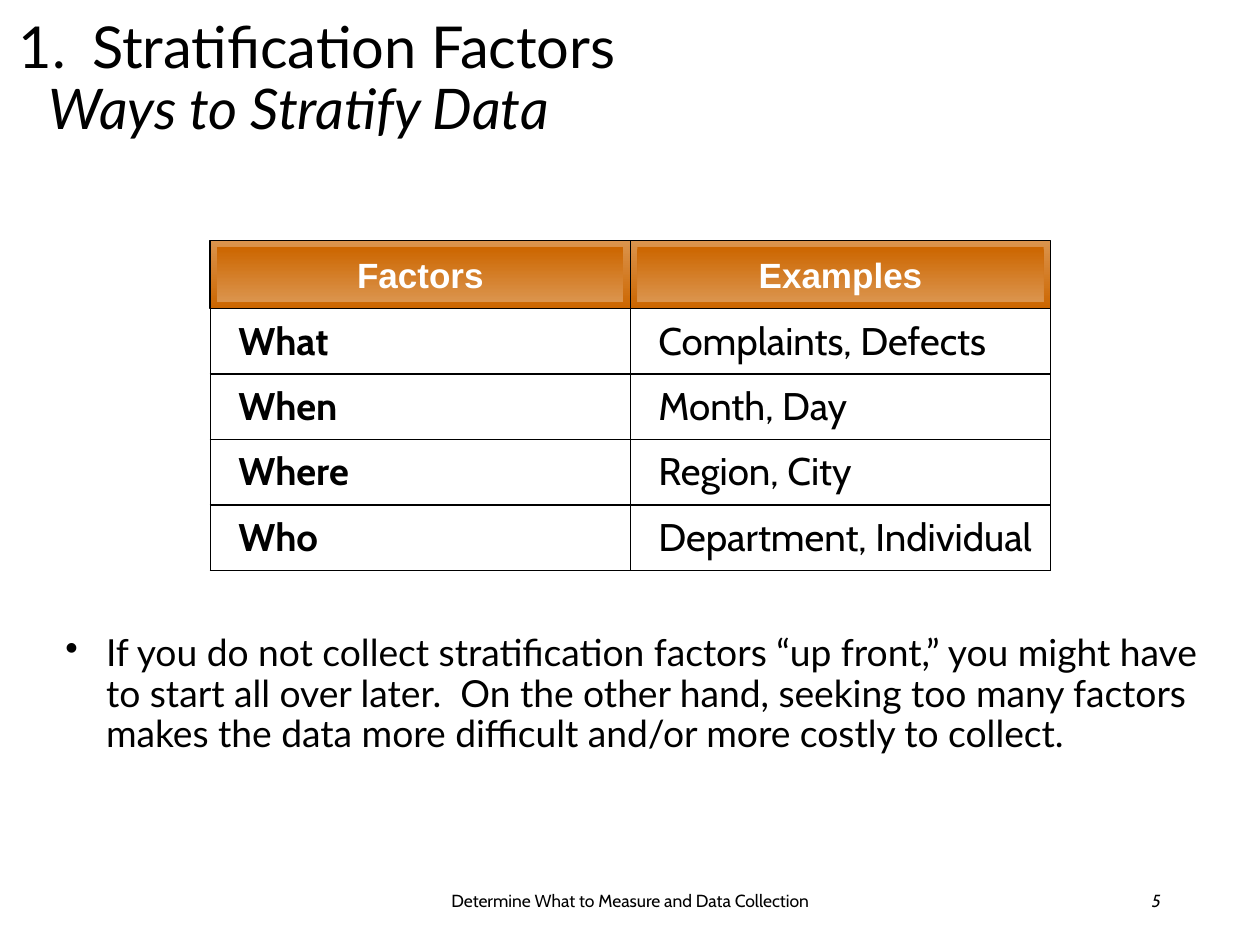
from dataclasses import dataclass

from lxml import etree
from pptx import Presentation
from pptx import util as u
from pptx.dml import color as c
from pptx.enum import shapes, text
from pptx.oxml import ns

Cm = u.Cm


@dataclass(frozen=True)
class Theme:
    ink: str = "000000"
    white: str = "FFFFFF"
    dark: str = "CC6600"
    light: str = "DB944D"
    main: str = "Lato"
    side: str = "Cabin"
    head: str = "Arial"
    title: float = 33
    sub: float = 32
    body: float = 21.3
    cell: float = 22
    label: float = 20
    foot: float = 10


T = Theme()
ALIGN = text.PP_ALIGN
ROWS = [
    ("What", "Complaints, Defects"),
    ("When", "Month, Day"),
    ("Where", "Region, City"),
    ("Who", "Department, Individual"),
]
LEFT, TOP, WIDE, HEAD, ROW = 4.24, 4.85, 8.47, 1.37, 1.32


def rgb(code):
    return c.RGBColor.from_string(code)


def write(para, words, size, font, ink=T.ink, bold=False, slant=False,
          align=ALIGN.LEFT, space=None, left=0, hang=0, mark=None):
    """Fill a paragraph; mark is a bullet element name and its attributes."""
    para.alignment = align
    if space:
        para.line_spacing = space
    props = para._p.get_or_add_pPr()
    props.set("marL", str(Cm(left)))
    props.set("indent", str(Cm(hang)))
    if mark:
        name, attrs = mark
        etree.SubElement(props, ns.qn(name), attrs)
    run = para.add_run()
    run.text = words
    run.font.size = u.Pt(size)
    run.font.name = font
    run.font.bold = bold
    run.font.italic = slant
    run.font.color.rgb = rgb(ink)


def add_box(slide, left, top, width, height, anchor=text.MSO_ANCHOR.MIDDLE):
    box = slide.shapes.add_textbox(Cm(left), Cm(top), Cm(width), Cm(height))
    frame = box.text_frame
    frame.word_wrap = True
    frame.vertical_anchor = anchor
    return frame


def add_panel(group, left, top, width, height, upper, lower):
    """Add a rectangle shaded from upper to lower colour."""
    panel = group.shapes.add_shape(shapes.MSO_SHAPE.RECTANGLE, Cm(left),
                                   Cm(top), Cm(width), Cm(height))
    panel.shadow.inherit = False
    panel.fill.gradient()
    panel.fill.gradient_angle = 270
    for stop, code in zip(panel.fill.gradient_stops, (upper, lower)):
        stop.color.rgb = rgb(code)
    panel.line.fill.background()
    return panel


def add_head(slide, left, words):
    """Add a bevelled column heading."""
    rim = 0.14
    group = slide.shapes.add_group_shape()
    outer = add_panel(group, left, TOP, WIDE, HEAD, T.light, T.dark)
    outer.line.color.rgb = rgb(T.ink)
    outer.line.width = u.Pt(1)
    inner = add_panel(group, left + rim, TOP + rim, WIDE - 2 * rim,
                      HEAD - 2 * rim, T.dark, T.light)
    frame = inner.text_frame
    frame.vertical_anchor = text.MSO_ANCHOR.MIDDLE
    write(frame.paragraphs[0], words, T.label, T.head, ink=T.white,
          bold=True, align=ALIGN.CENTER)


def edge(cell):
    """Draw thin lines on all four sides of a cell."""
    props = cell._tc.get_or_add_tcPr()
    for spot, side in enumerate(("a:lnL", "a:lnR", "a:lnT", "a:lnB")):
        line = etree.Element(ns.qn(side), w=str(u.Pt(1)))
        fill = etree.SubElement(line, ns.qn("a:solidFill"))
        etree.SubElement(fill, ns.qn("a:srgbClr"), val=T.ink)
        props.insert(spot, line)


def add_grid(slide):
    frame = slide.shapes.add_table(len(ROWS), 2, Cm(LEFT), Cm(TOP + HEAD),
                                   Cm(2 * WIDE), Cm(ROW * len(ROWS)))
    table = frame.table
    table.first_row = table.horz_banding = False
    for col in table.columns:
        col.width = Cm(WIDE)
    for row, pair in zip(table.rows, ROWS):
        row.height = Cm(ROW)
        for spot, (cell, words) in enumerate(zip(row.cells, pair)):
            cell.fill.background()
            cell.vertical_anchor = text.MSO_ANCHOR.MIDDLE
            write(cell.text_frame.paragraphs[0], words, T.cell, T.side,
                  bold=spot == 0, left=0.79, hang=-0.48)
            edge(cell)


def add_title(slide):
    frame = add_box(slide, 0.13, 0.03, 21.1, 3.17)
    write(frame.paragraphs[0], "Stratification Factors", T.title, T.main,
          space=0.9, left=1.48, hang=-1.48,
          mark=("a:buAutoNum", {"type": "arabicPeriod"}))
    write(frame.add_paragraph(), "Ways to Stratify Data", T.sub, T.main,
          slant=True, space=0.9, left=0.6)


def add_note(slide):
    frame = add_box(slide, 1.07, 12.67, 23.67, 2.92, text.MSO_ANCHOR.TOP)
    write(frame.paragraphs[0],
          "If you do not collect stratification factors “up front,” you might "
          "have to start all over later.  On the other hand, seeking too many "
          "factors makes the data more difficult and/or more costly to "
          "collect.", T.body, T.main, space=0.9, left=0.82, hang=-0.82,
          mark=("a:buChar", {"char": "•"}))


def add_foot(slide):
    top, height = 17.65, 1.02
    page = add_box(slide, 17.93, top, 5.72, height)
    write(page.paragraphs[0], "5", T.foot, T.side, slant=True,
          align=ALIGN.RIGHT)
    name = add_box(slide, 8.41, top, 8.58, height)
    write(name.paragraphs[0], "Determine What to Measure and Data Collection",
          T.foot, T.side, align=ALIGN.CENTER)


def main():
    deck = Presentation()
    deck.slide_width, deck.slide_height = Cm(25.4), Cm(19.05)
    slide = deck.slides.add_slide(deck.slide_layouts[6])
    add_title(slide)
    add_note(slide)
    add_foot(slide)
    add_grid(slide)
    for spot, words in enumerate(("Factors", "Examples")):
        add_head(slide, LEFT + spot * WIDE, words)
    deck.save("out.pptx")


if __name__ == "__main__":
    main()
